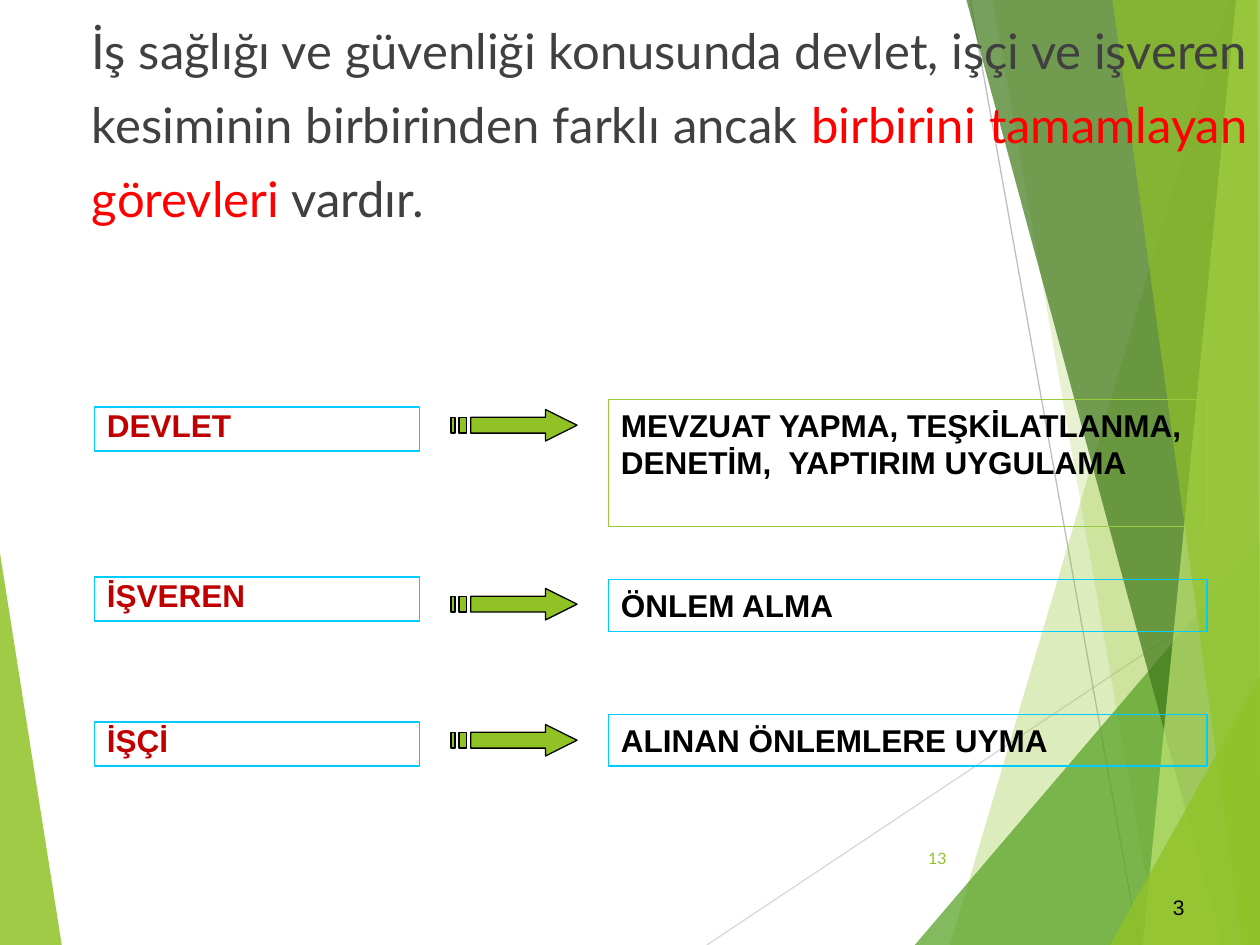
from lxml import etree
from pptx import Presentation
from pptx.dml.color import RGBColor
from pptx.enum.shapes import MSO_CONNECTOR, MSO_SHAPE
from pptx.enum.text import MSO_ANCHOR, MSO_AUTO_SIZE, PP_ALIGN
from pptx.oxml.ns import qn
from pptx.util import Inches, Pt

RECT = MSO_SHAPE.RECTANGLE
STRAIGHT = MSO_CONNECTOR.STRAIGHT
TOP, MIDDLE, BOTTOM = MSO_ANCHOR.TOP, MSO_ANCHOR.MIDDLE, MSO_ANCHOR.BOTTOM
LEFT, RIGHT, JUSTIFY = PP_ALIGN.LEFT, PP_ALIGN.RIGHT, PP_ALIGN.JUSTIFY

COLORS = {
    "green": "90C226", "leaf": "54A021", "forest": "3F7819", "lime": "C0E474",
    "frame": "99CA3C", "cyan": "00CCFF", "light_gray": "D9D9D9", "gray": "BFBFBF",
    "text": "404040", "red": "FF0000", "dark_red": "C00000", "black": "000000",
}

# Facets from back to front: corner points in inches, colour, opacity in percent
FACETS = [
    ([(9.75, 0), (7.54, 7.5), (10.02, 7.51), (10.01, 0.01)], "green", 30),
    ([(7.88, 0), (9.19, 7.5), (10.01, 7.5), (10.01, 0)], "green", 20),
    ([(7.26, 7.5), (10, 4.29), (10.01, 7.5)], "leaf", 72),
    ([(7.67, 0), (9.7, 7.5), (10.01, 7.5), (10.01, 0)], "forest", 70),
    ([(9.81, 0), (9.07, 7.5), (10.01, 7.5), (10, 0)], "lime", 70),
    ([(8.83, 0), (9.86, 7.5), (10, 7.5), (9.98, 0)], "green", 65),
    ([(8.81, 7.5), (10.01, 5.35), (10.01, 7.5)], "green", 80),
]
LEFT_FACET = ([(0, 4.39), (0.49, 7.5), (0, 7.5)], "green", 85)

# Party, duty, frame colour, then tops of party, arrow and duty, and duty height
ROWS = [
    ("DEVLET", "MEVZUAT YAPMA, TEŞKİLATLANMA, DENETİM,  YAPTIRIM UYGULAMA",
     "frame", 3.23, 3.25, 3.17, 1.01),
    ("İŞVEREN", "ÖNLEM ALMA", "cyan", 4.58, 4.67, 4.6, 0.41),
    ("İŞÇİ", "ALINAN ÖNLEMLERE UYMA", "cyan", 5.73, 5.75, 5.67, 0.41),
]


def rgb(name):
    return RGBColor.from_string(COLORS[name])


def write(sp, runs, size, font, bold=False, align=LEFT, anchor=TOP, spacing=1.0):
    """Fill a shape with one paragraph of (text, colour) runs."""
    tf = sp.text_frame
    tf.word_wrap = True
    tf.auto_size = MSO_AUTO_SIZE.NONE
    tf.vertical_anchor = anchor
    p = tf.paragraphs[0]
    p.alignment = align
    p.line_spacing = spacing
    p.space_before = Pt(0)
    for text, color in runs:
        r = p.add_run()
        r.text = text
        r.font.name = font
        r.font.size = Pt(size)
        r.font.bold = bold
        r.font.color.rgb = rgb(color)
    return p


def add_outline(slide, contours, color):
    """Draw closed contours, given in inches, as a single filled shape."""
    scaled = [[(Inches(x), Inches(y)) for x, y in points] for points in contours]
    builder = slide.shapes.build_freeform(*scaled[0][0], scale=1.0)
    builder.add_line_segments(scaled[0][1:], close=True)
    for points in scaled[1:]:
        builder.move_to(*points[0])
        builder.add_line_segments(points[1:], close=True)
    sp = builder.convert_to_shape()
    sp.shadow.inherit = False
    sp.fill.solid()
    sp.fill.fore_color.rgb = rgb(color)
    return sp


def add_facet(slide, points, color, opacity):
    sp = add_outline(slide, [points], color)
    sp.line.fill.background()
    clr = sp._element.spPr.find(qn("a:solidFill"))[0]
    etree.SubElement(clr, qn("a:alpha"), val=str(opacity * 1000))


def add_line(slide, x1, y1, x2, y2, color):
    line = slide.shapes.add_connector(
        STRAIGHT, Inches(x1), Inches(y1), Inches(x2), Inches(y2))
    line.line.color.rgb = rgb(color)
    line.line.width = Pt(0.75)
    etree.SubElement(line._element.spPr, qn("a:effectLst"))


def add_backdrop(slide):
    add_facet(slide, *LEFT_FACET)
    add_line(slide, 5.61, 7.5, 10.01, 4.57, "light_gray")
    add_line(slide, 7.7, 0, 9.04, 7.5, "gray")
    for facet in FACETS:
        add_facet(slide, *facet)


def add_statement(slide, body, x, y, w, h):
    slide.shapes._spTree.append(body._element)  # in front of the backdrop
    body.left, body.top, body.width, body.height = map(Inches, (x, y, w, h))
    p = write(body, [
        ("İş sağlığı ve güvenliği konusunda devlet, işçi ve işveren "
         "kesiminin birbirinden farklı ancak ", "text"),
        ("birbirini tamamlayan görevleri ", "red"),
        ("vardır.", "text"),
    ], 28, "Lato", align=JUSTIFY, spacing=1.25)
    pPr = p._p.get_or_add_pPr()
    pPr.set("marL", str(Inches(0.38)))
    pPr.set("indent", "0")
    etree.SubElement(pPr, qn("a:buNone"))


def add_frame(slide, x, y, w, h, color):
    sp = slide.shapes.add_shape(RECT, Inches(x), Inches(y), Inches(w), Inches(h))
    sp.shadow.inherit = False
    sp.fill.background()
    sp.line.color.rgb = rgb(color)
    sp.line.width = Pt(0.75)
    return sp


def add_striped_arrow(slide, x, y, w, h):
    """Arrow whose tail is cut into two thin stripes."""
    def bar(start, end):
        return [(x + w * a, y + h * b) for a, b in
                ((start, 0.25), (start, 0.75), (end, 0.75), (end, 0.25))]

    head = [(x + w * 0.75, y + h), (x + w, y + h / 2), (x + w * 0.75, y)]
    shaft = bar(5 / 32, 0.75)
    arrow = shaft[:3] + head + shaft[3:]
    sp = add_outline(slide, [arrow, bar(2 / 32, 4 / 32), bar(0, 1 / 32)], "green")
    sp.line.color.rgb = rgb("black")
    sp.line.width = Pt(0.75)


def add_row(slide, x, party, duty, color, party_y, arrow_y, duty_y, duty_h):
    sp = add_frame(slide, x, party_y, 2.58, 0.35, "cyan")
    write(sp, [(party, "dark_red")], 18, "Arial", bold=True, spacing=0.8)
    add_striped_arrow(slide, x + 2.83, arrow_y, 1, 0.25)
    sp = add_frame(slide, x + 4.08, duty_y, 4.75, duty_h, color)
    write(sp, [(duty, "black")], 18, "Arial", bold=True)


def add_number(slide, x, y, w, h, text, color, size, font, anchor):
    sp = slide.shapes.add_textbox(Inches(x), Inches(y), Inches(w), Inches(h))
    write(sp, [(text, color)], size, font, align=RIGHT, anchor=anchor)


def main():
    prs = Presentation()
    prs.slide_width, prs.slide_height = Inches(10), Inches(7.5)
    slide = prs.slides.add_slide(prs.slide_layouts[1])
    title, body = slide.placeholders
    slide.shapes._spTree.remove(title._element)

    add_backdrop(slide)
    add_number(slide, 7.05, 6.61, 0.56, 0.4, "13", "green", 9, "Lato", MIDDLE)
    add_statement(slide, body, 0.25, 0, 9.75, 2.17)
    add_number(slide, 7.17, 6.83, 2.33, 0.52, "3", "black", 12, "Arial", BOTTOM)
    for row in ROWS:
        add_row(slide, 0.75, *row)
    prs.save("out.pptx")


if __name__ == "__main__":
    main()
